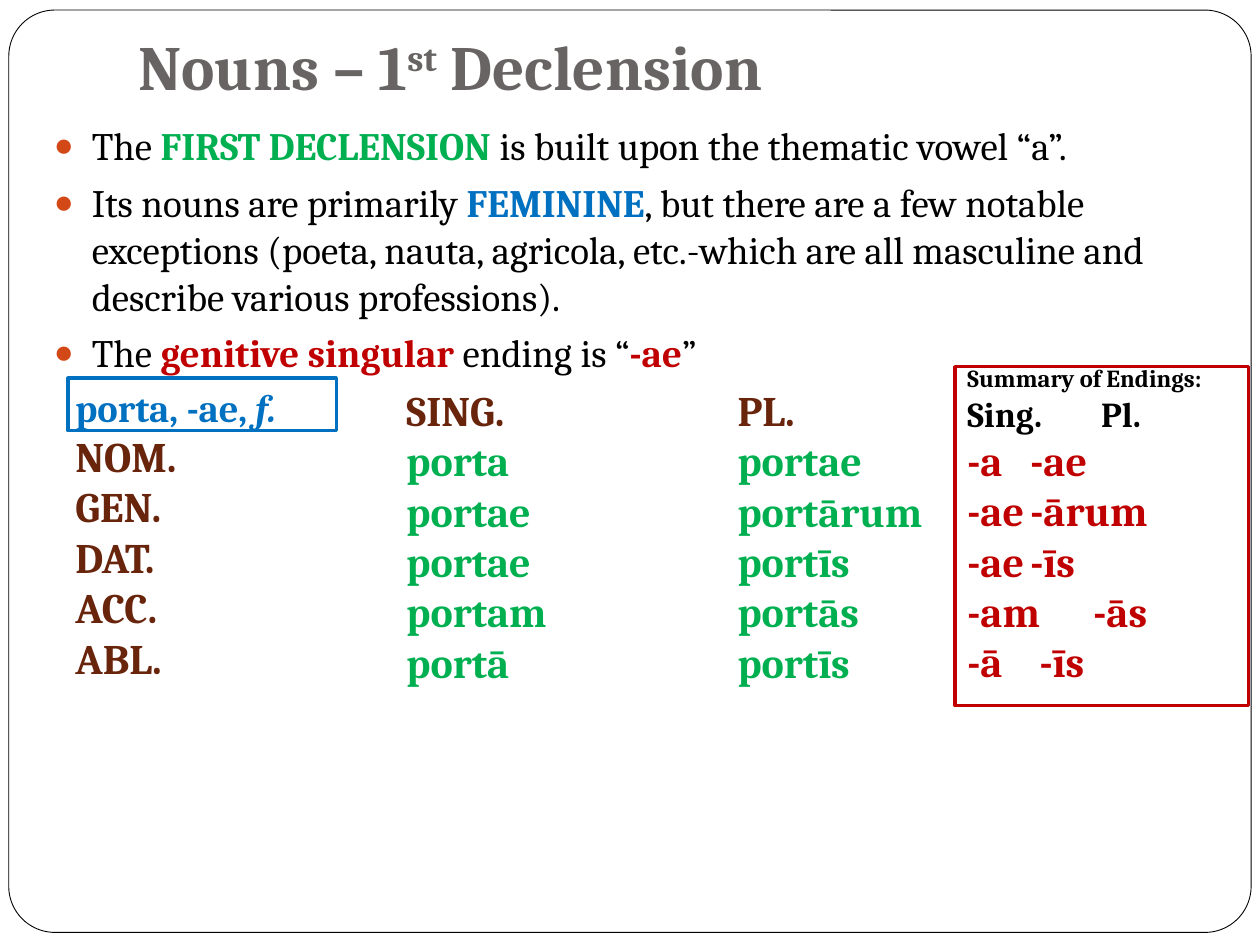
from dataclasses import dataclass

from lxml import etree
from pptx import Presentation
from pptx.dml.color import RGBColor
from pptx.enum.shapes import MSO_SHAPE
from pptx.enum.text import MSO_ANCHOR, MSO_AUTO_SIZE
from pptx.oxml.ns import qn
from pptx.util import Inches, Pt


@dataclass(frozen=True)
class Theme:
    font: str = "Cambria"
    black: str = "000000"
    white: str = "FFFFFF"
    gray: str = "696464"
    green: str = "00B050"
    blue: str = "0070C0"
    red: str = "C00000"
    brown: str = "69240C"
    bullet: str = "D34817"
    title: float = 36
    body: float = 22.2
    table: float = 24
    lemma: float = 22
    heading: float = 20
    caption: float = 14


theme = Theme()


def add_frame(shapes, left, top, width, height):
    box = shapes.add_textbox(Inches(left), Inches(top), Inches(width), Inches(height))
    box.text_frame.word_wrap = True
    return box.text_frame


def write(tf, runs, size, color, bold=True):
    """Add a paragraph of (text, color or None) runs; colored runs are bold."""
    first = tf.paragraphs[0]
    p = first if not first.runs else tf.add_paragraph()
    p.font.name, p.font.size, p.font.bold = theme.font, Pt(size), bold
    p.font.color.rgb = RGBColor.from_string(color)
    for text, accent in runs:
        r = p.add_run()
        r.text = text
        r.font.name, r.font.size = theme.font, Pt(size)
        r.font.bold = bold or accent is not None
        r.font.color.rgb = RGBColor.from_string(accent or color)
    return p


prs = Presentation()
prs.slide_width, prs.slide_height = Inches(10), Inches(7.5)
s = prs.slides.add_slide(prs.slide_layouts[6])

# Rounded page frame
sp = s.shapes.add_shape(MSO_SHAPE.ROUNDED_RECTANGLE,
                        Inches(0.07), Inches(0.08), Inches(9.86), Inches(7.32))
sp.adjustments[0] = 0.05
sp.shadow.inherit = False
sp.fill.solid()
sp.fill.fore_color.rgb = RGBColor.from_string(theme.white)
sp.line.color.rgb = RGBColor.from_string(theme.black)
sp.line.width = Pt(0.5)

# Title with raised ordinal
tf = add_frame(s.shapes, 1, 0.3, 8.5, 0.62)
tf.vertical_anchor = MSO_ANCHOR.BOTTOM
tf.margin_bottom = Inches(0.1)
p = write(tf, [("Nouns – 1", None), ("st", None), (" Declension", None)],
          theme.title, theme.gray)
p.runs[1]._r.get_or_add_rPr().set("baseline", "30000")

# Bulleted rules
rules = [
    [("The ", None), ("FIRST DECLENSION ", theme.green),
     ("is built upon the thematic vowel “a”.", None)],
    [("Its nouns are primarily ", None), ("FEMININE", theme.blue),
     (", but there are a few notable exceptions (poeta, nauta, agricola, etc.-which "
      "are all masculine and describe various professions).", None)],
    [("The ", None), ("genitive singular ", theme.red), ("ending is “", None),
     ("-ae", theme.red), ("”", None)],
]
tf = add_frame(s.shapes, 0.33, 0.92, 9.42, 1.92)
for rule in rules:
    p = write(tf, rule, theme.body, theme.black, bold=False)
    p.space_before = Pt(5.8)
    pPr = p._p.get_or_add_pPr()
    pPr.set("marL", str(Inches(0.3)))
    pPr.set("indent", str(-Inches(0.3)))
    bullet_color = etree.Element(qn("a:buClr"))
    etree.SubElement(bullet_color, qn("a:srgbClr"), val=theme.bullet)
    bullet_parts = [
        bullet_color,
        etree.Element(qn("a:buSzPct"), val="85000"),
        etree.Element(qn("a:buFont"), typeface="Arial"),
        etree.Element(qn("a:buChar"), char="●"),
    ]
    # Bullet settings stand after the spacing and before the default font
    for part in bullet_parts:
        pPr.find(qn("a:defRPr")).addprevious(part)

# Paradigm in three text columns
tf = add_frame(s.shapes, 0.5, 3, 8.08, 2.52)
tf.auto_size = MSO_AUTO_SIZE.SHAPE_TO_FIT_TEXT
tf._txBody.bodyPr.set("numCol", "3")
p = write(tf, [("porta, -ae, ", None), ("f.", None)], theme.lemma, theme.blue)
p.runs[1].font.italic = True
for case in ["NOM.", "GEN.", "DAT.", "ACC.", "ABL."]:
    write(tf, [(case, None)], theme.table, theme.brown)
paradigm = {
    "SING.": ["porta", "portae", "portae", "portam", "portā"],
    "PL.": ["portae", "portārum", "portīs", "portās", "portīs"],
}
for number, forms in paradigm.items():
    write(tf, [(number, None)], theme.table, theme.brown)
    for form in forms:
        write(tf, [(form, None)], theme.table, theme.green)

# Outline around the dictionary entry, then the grouped summary of endings
summary = s.shapes.add_group_shape()
tf = add_frame(summary.shapes, 7.58, 2.83, 2.5, 2.69)
tf.auto_size = MSO_AUTO_SIZE.SHAPE_TO_FIT_TEXT
write(tf, [("Summary of Endings:", None)], theme.caption, theme.black)
write(tf, [("Sing.\t Pl.", None)], theme.heading, theme.black)
for endings in ["-a\t-ae", "-ae\t-ārum", "-ae\t-īs", "-am\t-ās", "-ā\t -īs"]:
    write(tf, [(endings, None)], theme.table, theme.red)

outlines = [
    (s.shapes, (0.54, 3, 2.13, 0.42), theme.blue),
    (summary.shapes, (7.58, 2.91, 2.33, 2.69), theme.red),
]
for shapes, bounds, color in outlines:
    sp = shapes.add_shape(MSO_SHAPE.RECTANGLE, *map(Inches, bounds))
    sp.shadow.inherit = False
    sp.fill.background()
    sp.line.color.rgb = RGBColor.from_string(color)
    sp.line.width = Pt(1.75)

prs.save("out.pptx")
